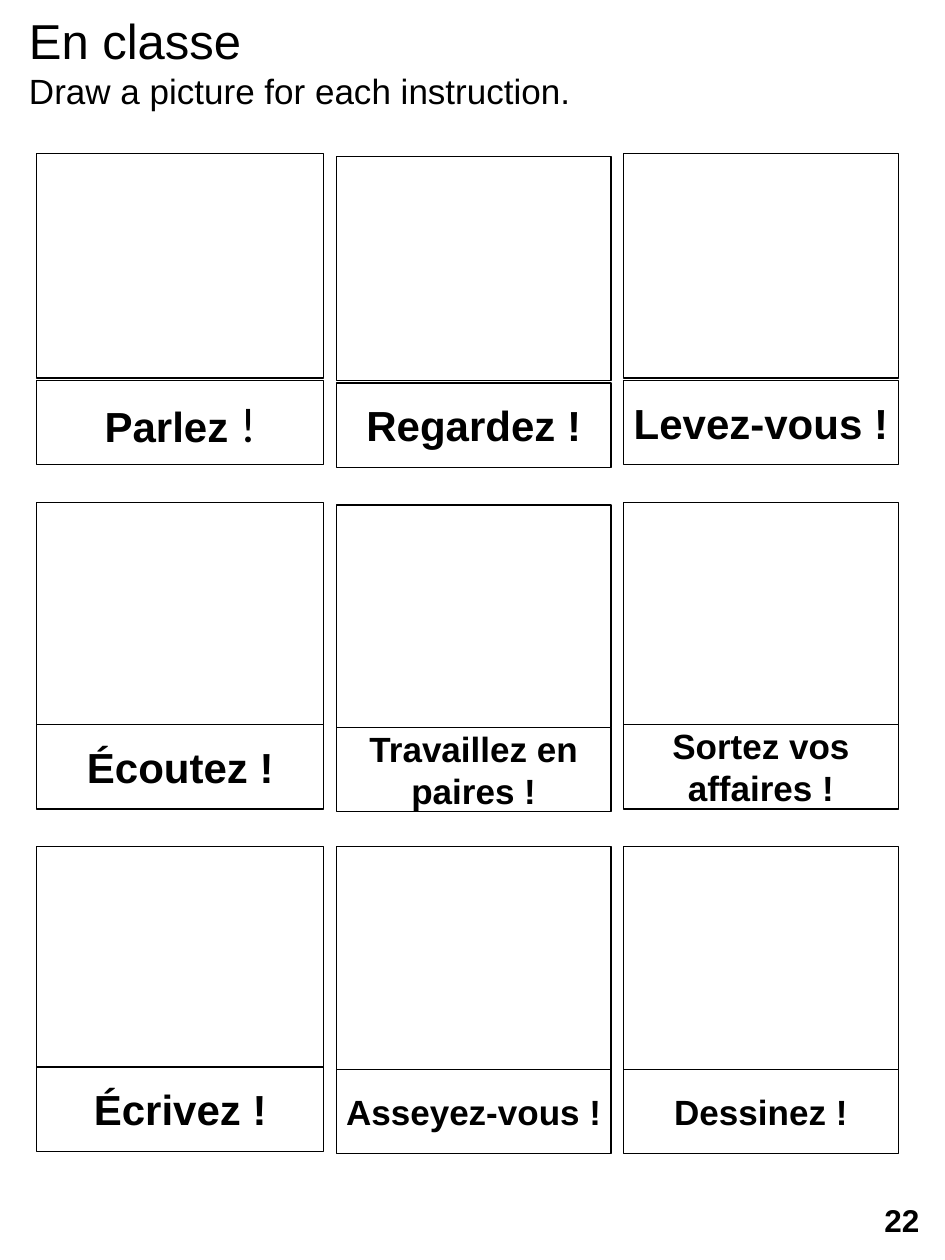
import pptx
import pptx.util
import pptx.dml.color
import pptx.enum.shapes
import pptx.enum.text
from pptx.util import Cm, Pt

SHAPE = pptx.enum.shapes.MSO_SHAPE
ANCHOR = pptx.enum.text.MSO_ANCHOR
ALIGN = pptx.enum.text.PP_ALIGN
BLACK, WHITE = "000000", "FFFFFF"


def rgb(value):
    return pptx.dml.color.RGBColor.from_string(value)


class Worksheet:
    font = {"name": "Arial", "bold": False}
    line_width = Pt(0.75)

    def __init__(self, prs):
        self.s = prs.slides.add_slide(prs.slide_layouts[5])

    def run(self, p, text, **formats):
        r = p.add_run()
        r.text = text
        for name, value in {**self.font, **formats}.items():
            setattr(r.font, name, value)
        r.font.color.rgb = rgb(BLACK)

    def title(self, heading, instruction, **place):
        sp = self.s.shapes.title
        for name, value in place.items():
            setattr(sp, name, Cm(value))
        tf = sp.text_frame
        frame = {"auto_size": pptx.enum.text.MSO_AUTO_SIZE.NONE,
                 "vertical_anchor": ANCHOR.MIDDLE, "word_wrap": True}
        for name, value in frame.items():
            setattr(tf, name, value)
        p = tf.paragraphs[0]
        p.alignment = ALIGN.LEFT
        self.run(p, heading, size=Pt(28))
        p.add_line_break()
        self.run(p, instruction, size=Pt(20))

    def box(self, left, top, width, height, kind=SHAPE.RECTANGLE):
        sp = self.s.shapes.add_shape(kind, Cm(left), Cm(top), Cm(width), Cm(height))
        sp.shadow.inherit = False
        sp.fill.solid()
        sp.fill.fore_color.rgb = rgb(WHITE)
        sp.line.color.rgb = rgb(BLACK)
        sp.line.width = self.line_width
        return sp

    def centred(self, sp):
        tf = sp.text_frame
        tf.word_wrap = True
        tf.vertical_anchor = ANCHOR.MIDDLE
        p = tf.paragraphs[0]
        p.alignment = ALIGN.CENTER
        return p

    def label(self, left, top, width, height, text, size):
        sp = self.box(left, top, width, height)
        for side in ("left", "top", "right", "bottom"):
            setattr(sp.text_frame, f"margin_{side}", 0)
        p = self.centred(sp)
        p.space_after = Pt(10)
        if text == "Parlez !":
            self.run(p, "Parlez ", size=Pt(size), bold=True)
            self.run(p, "!", size=Pt(28), name="Calibri")
        else:
            self.run(p, text, size=Pt(size), bold=True)

    def page_number(self, left, top, width, height, text):
        sp = self.box(left, top, width, height, SHAPE.ROUNDED_RECTANGLE)
        sp.fill.background()
        sp.line.fill.background()
        self.run(self.centred(sp), text, size=Pt(18), bold=True)


def main():
    prs = pptx.Presentation()
    prs.slide_width, prs.slide_height = Cm(19.05), Cm(25.4)
    sheet = Worksheet(prs)
    sheet.title("En classe", "Draw a picture for each instruction.",
                left=0.33, top=0.08, width=18.34, height=2.31)

    columns = [(0.74, 5.79), (6.78, 5.54), (12.57, 5.54)]
    drop = 0.05
    rows = [
        (3.1, 7.67, (0, drop, 0), (0, drop, 0),
         [("Parlez !", 24), ("Regardez !", 24), ("Levez-vous !", 24)]),
        (10.13, 14.61, (0, drop, 0), (0, drop, 0),
         [("Écoutez !", 24), ("Travaillez en paires !", 20), ("Sortez vos affaires !", 20)]),
        (17.07, 21.51, (0, 0, 0), (0, drop, drop),
         [("Écrivez !", 24), ("Asseyez-vous !", 20), ("Dessinez !", 20)]),
    ]
    for frame_top, label_top, frame_drops, label_drops, instructions in rows:
        for (left, width), frame_drop, label_drop, (text, size) in zip(
                columns, frame_drops, label_drops, instructions):
            sheet.box(left, frame_top + frame_drop, width, 4.52)
            sheet.label(left, label_top + label_drop, width, 1.7, text, size)

    sheet.page_number(17.48, 24, 1.4, 1.19, "22")
    prs.save("out.pptx")


if __name__ == "__main__":
    main()
